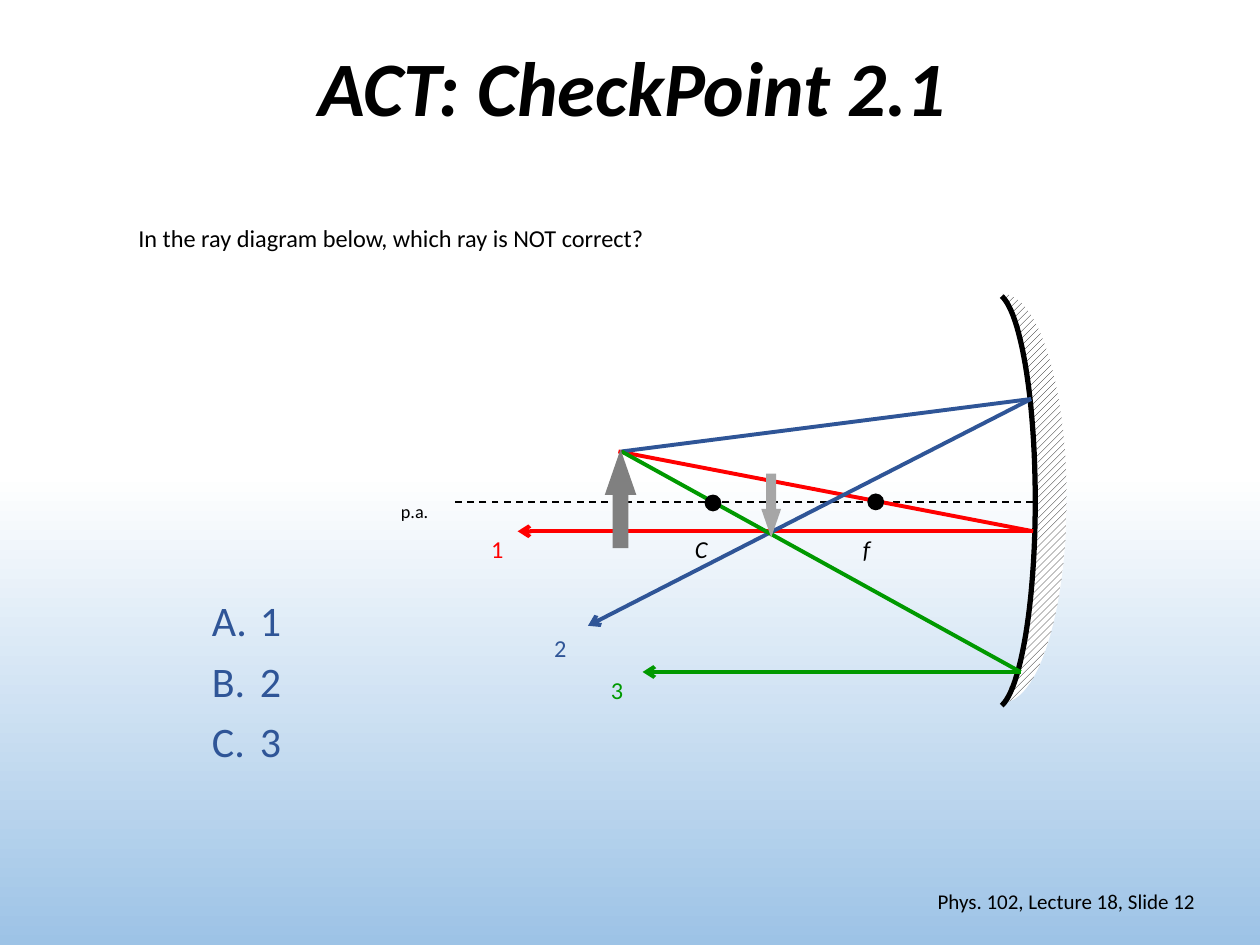
from lxml.etree import SubElement
from pptx import Presentation
from pptx.dml.color import RGBColor
from pptx.enum.dml import MSO_LINE, MSO_PATTERN
from pptx.enum.shapes import MSO_CONNECTOR, MSO_SHAPE as Shape
from pptx.enum.text import MSO_ANCHOR, PP_ALIGN
from pptx.oxml.ns import qn
from pptx.util import Inches, Pt

BLACK = RGBColor(0x00, 0x00, 0x00)
WHITE = RGBColor(0xFF, 0xFF, 0xFF)
SKY = RGBColor(0x9D, 0xC3, 0xE6)
RED = RGBColor(0xFF, 0x00, 0x00)
BLUE = RGBColor(0x2F, 0x55, 0x97)
GREEN = RGBColor(0x00, 0x99, 0x00)
GRAY = RGBColor(0x80, 0x80, 0x80)
SILVER = RGBColor(0xA6, 0xA6, 0xA6)
FONT = "Calibri"

deck = Presentation()
deck.slide_width, deck.slide_height = Inches(10), Inches(7.5)
UNIT = deck.slide_width / 120  # square grid: 120 columns, 90 rows
slide = deck.slides.add_slide(deck.slide_layouts[5])
shapes = slide.shapes


def grid(*cells):
    return [round(cell * UNIT) for cell in cells]


def write(box, lines, size, color):
    """Fill the box with lines of one style and return its paragraphs."""
    frame = box.text_frame
    frame.text = "\n".join(lines)
    for para in frame.paragraphs:
        font = para.runs[0].font
        font.name, font.size, font.color.rgb = FONT, Pt(size), color
    return frame.paragraphs


# Background
back = slide.background.fill
back.gradient()
back.gradient_angle = 270
for stop, place, color in zip(back.gradient_stops, (0.5, 1), (WHITE, SKY)):
    stop.position, stop.color.rgb = place, color

# Title
title = shapes.title
title.left, title.top, title.width, title.height = grid(8.5, 0, 103.5, 17.4)
head = write(title, ["ACT: CheckPoint 2.1"], 44, BLACK)[0]
title.text_frame.vertical_anchor = MSO_ANCHOR.MIDDLE
head.alignment, head.line_spacing = PP_ALIGN.CENTER, 0.9
head.runs[0].font.bold = head.runs[0].font.italic = True

# Mirror: hatched back, then the curved face (upper half and its reflection)
moon = shapes.add_shape(Shape.MOON, *grid(95.5, 28, 6.1, 38.9))
moon.adjustments[0] = 0.443
moon._element.spPr.find(qn("a:xfrm")).set("flipH", "1")
moon.fill.patterned()
moon.fill.pattern = MSO_PATTERN.WIDE_UPWARD_DIAGONAL
moon.fill.fore_color.rgb, moon.fill.back_color.rgb = BLACK, WHITE
moon.line.fill.background()
moon.shadow.inherit = False

AXIS = 47.7
CURVE = [(95.4, 28.2), (97.2, 29.8), (98.6, 37.9), (98.6, AXIS)]
STEPS = 24
upper = []
for step in range(STEPS + 1):
    t = step / STEPS
    parts = ((1 - t) ** 3, 3 * t * (1 - t) ** 2, 3 * t * t * (1 - t), t ** 3)
    upper.append([sum(p * c for p, c in zip(parts, axis)) for axis in zip(*CURVE)])
lower = [(x, 2 * AXIS - y) for x, y in reversed(upper[:-1])]
points = [grid(*point) for point in upper + lower]
pen = shapes.build_freeform(*points[0])
pen.add_line_segments(points[1:], close=False)
face = pen.convert_to_shape()
face.fill.background()
face.line.color.rgb, face.line.width = BLACK, Pt(3)
face.shadow.inherit = False

# Axis and rays: each ray leaves the tip, meets the mirror and returns
TIP = 43
rays = [
    (RED, (58.9, TIP), (98.4, 50.6), (49.3, 50.6)),
    (BLUE, (59.2, TIP), (98.2, 38), (56, 59.6)),
    (GREEN, (59.2, TIP), (97.2, 64), (61.2, 64)),
]
lines = [(BLACK, (98.4, 47.8), (43, 47.8), 1, "dash")]
for color, start, hit, end in rays:
    lines += [(color, start, hit, 2.25, ""), (color, hit, end, 2.25, "arrow")]
for color, start, end, width, kind in lines:
    link = shapes.add_connector(MSO_CONNECTOR.STRAIGHT, *grid(*start, *end))
    link.line.color.rgb, link.line.width = color, Pt(width)
    if kind == "dash":
        link.line.dash_style = MSO_LINE.DASH
    if kind == "arrow":
        SubElement(link.line._ln, qn("a:tailEnd"), type="arrow")
    SubElement(link._element.spPr, qn("a:effectLst"))

# Centre and focus points, object and image arrows
marks = [
    (Shape.OVAL, (67.1, 47.1, 1.6, 1.6), BLACK),
    (Shape.OVAL, (82.6, 47, 1.6, 1.6), BLACK),
    (Shape.UP_ARROW, (57.6, 42.8, 3, 9.4), GRAY),
    (Shape.DOWN_ARROW, (72.5, 45.1, 1.9, 6.1), SILVER),
]
for kind, place, color in marks:
    mark = shapes.add_shape(kind, *grid(*place))
    mark.fill.solid()
    mark.fill.fore_color.rgb = color
    mark.line.fill.background()
    mark.shadow.inherit = False
    if kind != Shape.OVAL:
        mark.adjustments[0], mark.adjustments[1] = 0.5, 1.445

# Question and diagram labels, all set as subscript
labels = [
    ("In the ray diagram below, which ray is NOT correct?", (12, 18, 91, 6), 24, BLACK),
    ("1", (45.6, 47.6, 4.4, 6), 24, RED),
    ("2", (51.6, 57, 4.4, 6), 24, BLUE),
    ("3", (57, 61, 5, 6), 24, GREEN),
    ("p.a.", (37, 45, 7, 4.8), 18, BLACK),
    ("C", (65, 47.6, 4.6, 6), 24, BLACK),
    ("f", (81, 47.6, 3.7, 6), 24, BLACK),
]
for text, place, size, color in labels:
    box = shapes.add_textbox(*grid(*place))
    box.text_frame.word_wrap = place[2] > 10
    font = write(box, [text], size, color)[0].runs[0].font
    font._element.set("baseline", "-25000")
    if text in ("C", "f"):
        font.italic = True

# Answers
box = shapes.add_textbox(*grid(19, 56, 9, 17.8))
box.text_frame.word_wrap = False
for para in write(box, ["1", "2", "3"], 24, BLUE):
    para.space_after = Pt(6)
    props = para._p.get_or_add_pPr()
    props.set("marL", str(Inches(0.38)))
    props.set("indent", str(-Inches(0.38)))
    SubElement(props, qn("a:buAutoNum"), type="alphaUcPeriod")

# Footer
box = shapes.add_textbox(*grid(84.7, 83.4, 30.3, 4.8))
box.text_frame.word_wrap = True
box.text_frame.vertical_anchor = MSO_ANCHOR.MIDDLE
foot = write(box, ["Phys. 102, Lecture 18, Slide 12"], 12, BLACK)[0]
foot.alignment = PP_ALIGN.RIGHT

deck.save("out.pptx")
